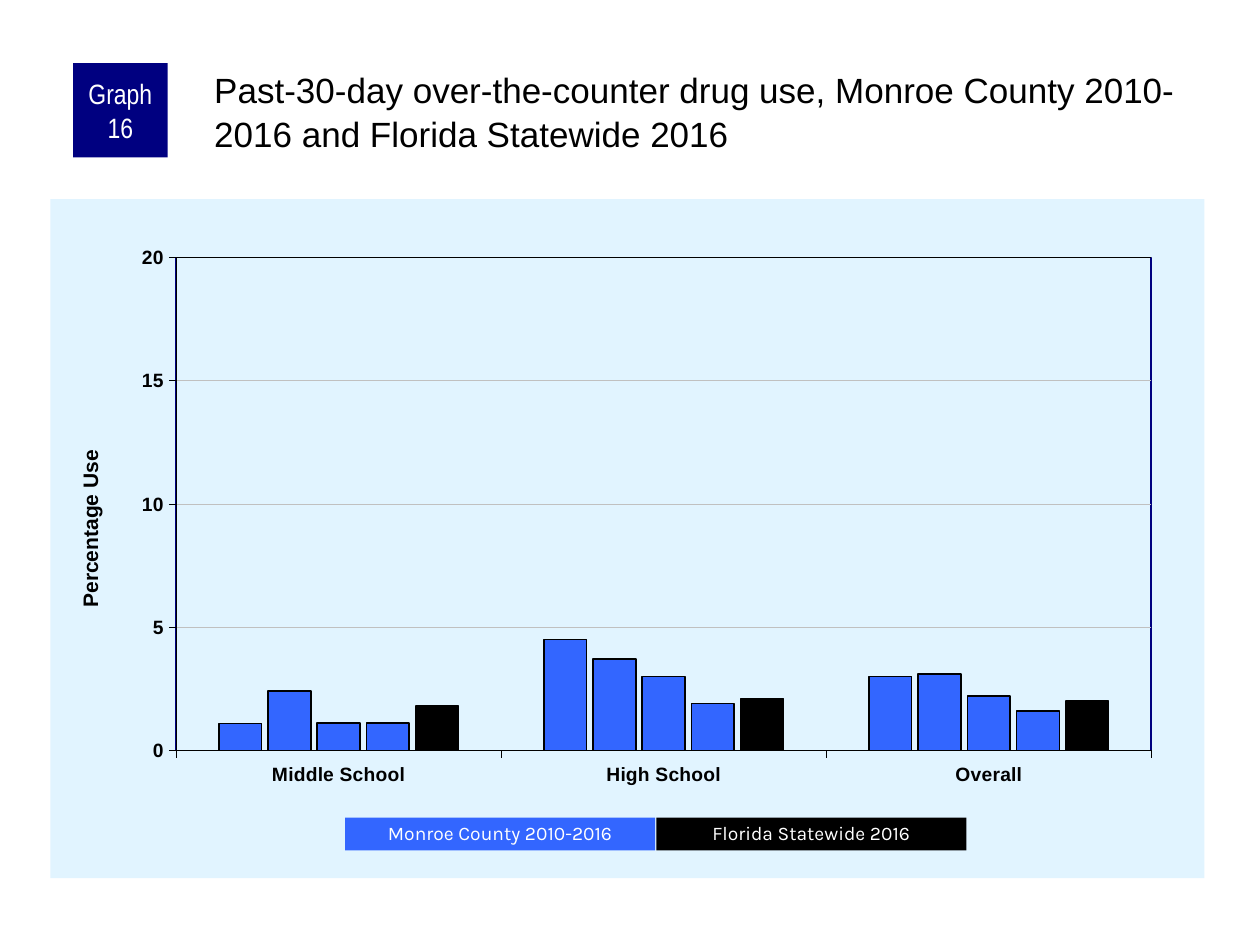
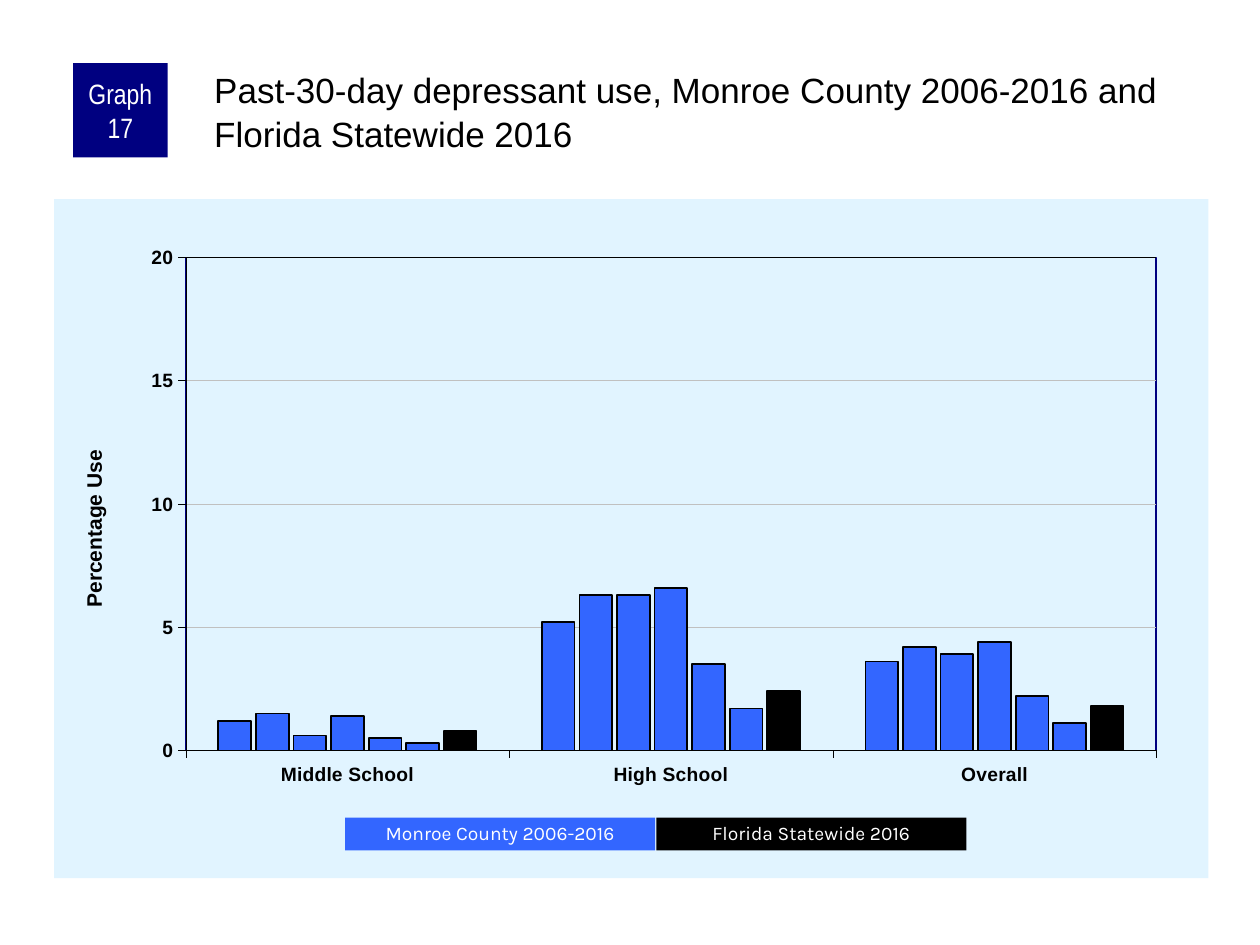
from pptx import Presentation
from pptx import util as u
from pptx.chart import data as cd
from pptx.dml.color import RGBColor
from pptx.enum import chart as ce, shapes, text
from pptx.oxml import ns, parse_xml

NAVY = RGBColor(0x00, 0x00, 0x80)
BLUE = RGBColor(0x33, 0x66, 0xFF)
PALE = RGBColor(0xE1, 0xF4, 0xFF)
GREY = RGBColor(0xC0, 0xC0, 0xC0)
BLACK = RGBColor(0, 0, 0)
WHITE = RGBColor(255, 255, 255)
URIS = ns.nsdecls("c", "a")

# Shared geometry of both slides
TOP, WIDE, HIGH = 1.58, 9.16, 5.39
PLOT_Y, PLOT_H = 0.086, 0.726
GROUPS = ["Middle School", "High School", "Overall"]

# One entry per graph: series run by survey year, the statewide one last
GRAPHS = [
    dict(num=16, left=0.4, plot=(0.109, 0.845), years="2010-2016",
         title="Past-30-day over-the-counter drug use, Monroe County 2010-2016"
               " and Florida Statewide 2016",
         rows=[(1.1, 4.5, 3), (2.4, 3.7, 3.1), (1.1, 3, 2.2),
               (1.1, 1.9, 1.6), (1.8, 2.1, 2)]),
    dict(num=17, left=0.43, plot=(0.114, 0.841), years="2006-2016",
         title="Past-30-day depressant use, Monroe County 2006-2016"
               " and Florida Statewide 2016",
         rows=[(1.2, 5.2, 3.6), (1.5, 6.3, 4.2), (0.6, 6.3, 3.9),
               (1.4, 6.6, 4.4), (0.5, 3.5, 2.2), (0.3, 1.7, 1.1),
               (0.8, 2.4, 1.8)]),
]


def add_box(slide, area, fill, words, font, size, space=1.0, side=0.1):
    box = slide.shapes.add_shape(shapes.MSO_SHAPE.RECTANGLE,
                                 *map(u.Inches, area))
    box.shadow.inherit = False
    box.fill.solid()
    box.fill.fore_color.rgb = fill
    box.line.fill.background()
    frame = box.text_frame
    look = dict(word_wrap=True, vertical_anchor=text.MSO_ANCHOR.MIDDLE,
                margin_left=u.Inches(side), margin_right=u.Inches(side),
                margin_top=0, margin_bottom=0)
    for key, val in look.items():
        setattr(frame, key, val)
    para = frame.paragraphs[0]
    para.text = words
    para.alignment = text.PP_ALIGN.CENTER
    para.line_spacing = space
    para.font.name, para.font.size = font, u.Pt(size)
    para.font.color.rgb = WHITE


def set_layout(node, index, inner="", **place):
    old = node.find(ns.qn("c:layout"))
    if old is not None:
        node.remove(old)
    modes = "".join(f'<c:{k}Mode val="edge"/>' for k in "xy")
    spots = "".join(f'<c:{k} val="{v}"/>' for k, v in place.items())
    node.insert(index, parse_xml(
        f"<c:layout {URIS}><c:manualLayout>{inner}{modes}{spots}"
        "</c:manualLayout></c:layout>"))


prs = Presentation()
prs.slide_width, prs.slide_height = u.Inches(10), u.Inches(7.5)

for graph in GRAPHS:
    slide = prs.slides.add_slide(prs.slide_layouts[5])

    # Title
    title = slide.shapes.title
    area = dict(left=1.67, top=0.5, width=7.92, height=0.83)
    for key, val in area.items():
        setattr(title, key, u.Inches(val))
    frame = title.text_frame
    look = dict(word_wrap=True, auto_size=text.MSO_AUTO_SIZE.NONE,
                vertical_anchor=text.MSO_ANCHOR.TOP,
                margin_left=u.Inches(0.03), margin_top=u.Inches(0.03),
                margin_right=0, margin_bottom=0)
    for key, val in look.items():
        setattr(frame, key, val)
    para = frame.paragraphs[0]
    para.text = graph["title"]
    para.alignment = text.PP_ALIGN.LEFT
    para.line_spacing = 1.05
    para.font.name, para.font.size = "Arial", u.Pt(20)
    para.font.color.rgb = BLACK

    # Chart
    data = cd.CategoryChartData()
    data.categories = GROUPS
    for num, row in enumerate(graph["rows"], 1):
        data.add_series(f"Series {num}", row)
    chart = slide.shapes.add_chart(
        ce.XL_CHART_TYPE.COLUMN_CLUSTERED,
        *map(u.Inches, (graph["left"], TOP, WIDE, HIGH)), data).chart
    chart.has_legend = chart.has_title = False
    chart.font.name, chart.font.size = "Arial", u.Pt(8)
    chart.font.color.rgb = BLACK

    # Bars
    plot = chart.plots[0]
    plot.gap_width, plot.overlap, plot.vary_by_categories = 200, -15, False
    for bar in plot.series:
        bar.format.fill.solid()
        bar.format.fill.fore_color.rgb = BLUE
        bar.format.line.color.rgb = BLACK
        bar.format.line.width = u.Pt(1)
    bar.format.fill.fore_color.rgb = BLACK
    if graph["num"] == 16:
        plot.series[0].format.line.width = u.Pt(0.75)

    # Axes
    for axis in (chart.category_axis, chart.value_axis):
        axis.major_tick_mark = ce.XL_TICK_MARK.OUTSIDE
        axis.minor_tick_mark = ce.XL_TICK_MARK.NONE
        axis.format.line.color.rgb = BLACK
        axis.format.line.width = u.Pt(0.25)
        font = axis.tick_labels.font
        font.name, font.size, font.bold = "Arial", u.Pt(11), True
        font.color.rgb = BLACK
    scale = dict(minimum_scale=0, maximum_scale=20, major_unit=5,
                 has_major_gridlines=True)
    for key, val in scale.items():
        setattr(axis, key, val)
    axis.tick_labels.number_format = "0"
    axis.tick_labels.number_format_is_linked = False
    grid = axis.major_gridlines.format.line
    grid.color.rgb, grid.width = GREY, u.Pt(0.25)
    para = axis.axis_title.text_frame.paragraphs[0]
    para.text = "Percentage Use"
    font = para.font
    font.name, font.size, font.bold = "Arial", u.Pt(12), True
    font.color.rgb = BLACK
    name = axis.axis_title._element
    body = name.find(ns.qn("c:tx")).find(".//" + ns.qn("a:bodyPr"))
    body.set("rot", "-5400000")
    body.set("vert", "horz")
    set_layout(name, 1, x=0.02, y=0.364)

    # Chart background and framed plot area
    space = chart._chartSpace
    area = space.chart.plotArea
    plot_x, plot_w = graph["plot"]
    set_layout(area, 0, '<c:layoutTarget val="inner"/>',
               x=plot_x, y=PLOT_Y, w=plot_w, h=PLOT_H)
    area.append(parse_xml(
        f'<c:spPr {URIS}><a:noFill/><a:ln w="{u.Pt(1)}"><a:solidFill>'
        f'<a:srgbClr val="{NAVY}"/></a:solidFill></a:ln></c:spPr>'))
    space.find(ns.qn("c:txPr")).addprevious(parse_xml(
        f'<c:spPr {URIS}><a:solidFill><a:srgbClr val="{PALE}"/></a:solidFill>'
        "<a:ln><a:noFill/></a:ln></c:spPr>"))

    # Black rule along the top of the plot
    start = graph["left"] + plot_x * WIDE
    level = TOP + PLOT_Y * HIGH
    rule = slide.shapes.add_connector(
        shapes.MSO_CONNECTOR.STRAIGHT,
        *map(u.Inches, (start, level, start + plot_w * WIDE, level)))
    rule.line.color.rgb, rule.line.width = BLACK, u.Pt(0.75)
    rule._element.spPr.append(parse_xml(f"<a:effectLst {URIS}/>"))

    # Number badge and colour key
    add_box(slide, (0.58, 0.5, 0.75, 0.75), NAVY, f"Graph {graph['num']}",
            "Arial Narrow", 16, side=0.05)
    keys = [(BLUE, f"Monroe County {graph['years']}"),
            (BLACK, "Florida Statewide 2016")]
    for col, (fill, words) in enumerate(keys):
        add_box(slide, (2.74 + col * 2.47, 6.49, 2.46, 0.26), fill, words,
                "Karla", 11, space=0.9)

prs.save("out.pptx")
